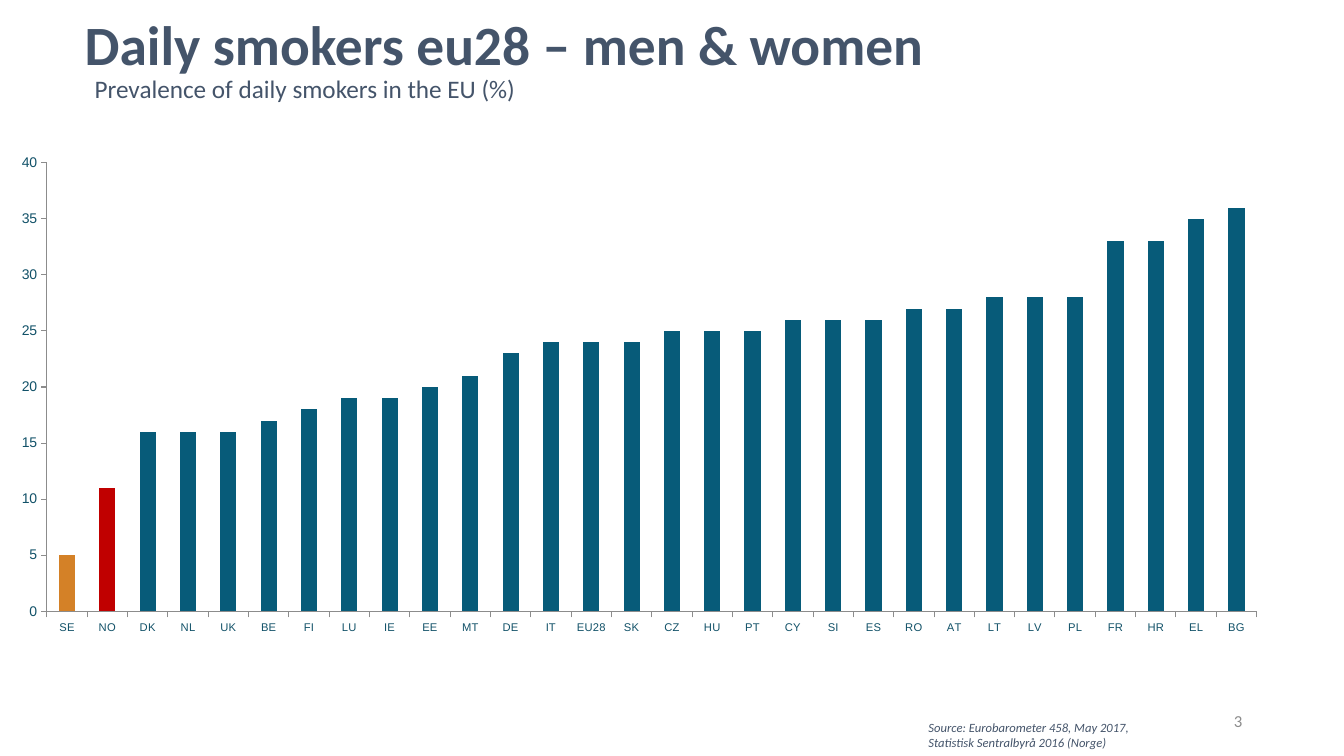
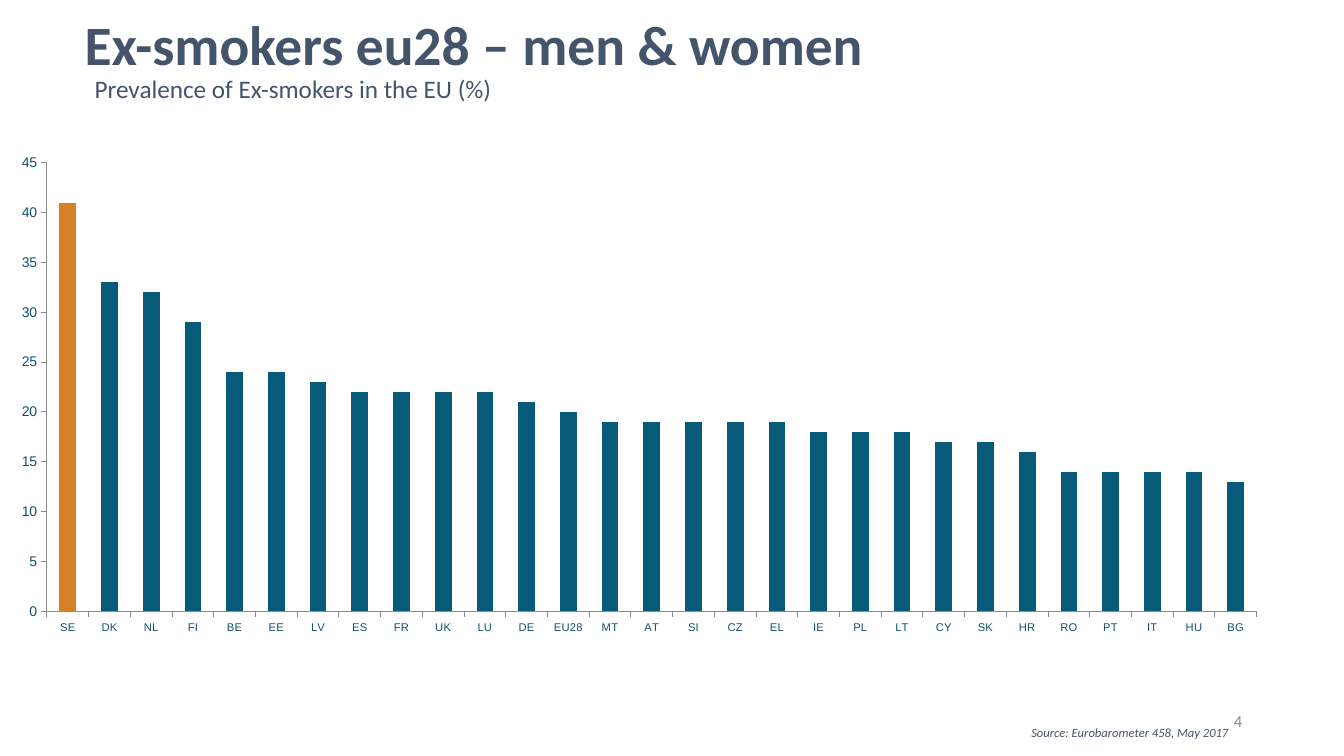
"""Build two slides that chart smoking prevalence in the EU."""
from dataclasses import dataclass

import lxml.etree
import pptx
import pptx.chart.data
import pptx.dml.color
import pptx.enum.chart
import pptx.enum.text
import pptx.oxml
import pptx.oxml.ns
import pptx.util

Inches = pptx.util.Inches
Align = pptx.enum.text.PP_ALIGN
Anchor = pptx.enum.text.MSO_ANCHOR


@dataclass(frozen=True)
class Theme:
    text: str = "44546A"
    muted: str = "8C8C8C"
    axis_text: str = "115168"
    bar: str = "075B79"
    sweden: str = "D48127"
    norway: str = "C00000"
    body_font: str = "Calibri"
    chart_font: str = "Arial"
    title_size: float = 39.6
    subtitle_size: int = 18
    number_size: int = 12
    source_size: int = 9
    value_size: int = 10
    category_size: int = 8


THEME = Theme()
HIGHLIGHTS = {"SE": THEME.sweden, "NO": THEME.norway}
PLOT_AREA = {"x": 0.037, "y": 0.027, "w": 0.953, "h": 0.832}

SLIDES = [
    {
        "number": "3",
        "title": "Daily smokers eu28 – men & women",
        "subtitle": "Prevalence of daily smokers in the EU (%)",
        "source": "Source: Eurobarometer 458, May 2017, Statistisk Sentralbyrå 2016 (Norge)",
        "source_position": (9.11, 7.09),
        "maximum": 40,
        "countries": "SE NO DK NL UK BE FI LU IE EE MT DE IT EU28 SK CZ HU PT CY SI "
                     "ES RO AT LT LV PL FR HR EL BG",
        "values": [5, 11, 16, 16, 16, 17, 18, 19, 19, 20, 21, 23, 24, 24, 24, 25, 25, 25,
                   26, 26, 26, 27, 27, 28, 28, 28, 33, 33, 35, 36],
    },
    {
        "number": "4",
        "title": "Ex-smokers eu28 – men & women",
        "subtitle": "Prevalence of Ex-smokers in the EU (%)",
        "source": "Source: Eurobarometer 458, May 2017",
        "source_position": (10.13, 7.14),
        "maximum": 45,
        "countries": "SE DK NL FI BE EE LV ES FR UK LU DE EU28 MT AT SI CZ EL IE PL "
                     "LT CY SK HR RO PT IT HU BG",
        "values": [41, 33, 32, 29, 24, 24, 23, 22, 22, 22, 22, 21, 20, 19, 19, 19, 19, 19,
                   18, 18, 18, 17, 17, 16, 14, 14, 14, 14, 13],
    },
]


def rgb(color):
    return pptx.dml.color.RGBColor.from_string(color)


def style_font(font, size, color, name=THEME.body_font, bold=False, italic=False):
    font.name, font.size = name, pptx.util.Pt(size)
    font.bold, font.italic = bold, italic
    font.color.rgb = rgb(color)


def write_text(shape, text, size, color, anchor=Anchor.TOP, align=Align.LEFT, **style):
    frame = shape.text_frame
    frame.word_wrap = True
    frame.auto_size = pptx.enum.text.MSO_AUTO_SIZE.NONE
    frame.vertical_anchor = anchor
    frame.text = text
    paragraph = frame.paragraphs[0]
    paragraph.alignment = align
    style_font(paragraph.font, size, color, **style)
    return paragraph


def add_text(slide, box, *content, **style):
    write_text(slide.shapes.add_textbox(*map(Inches, box)), *content, **style)


def set_title(slide, text):
    title = slide.shapes.title
    title.left, title.top, title.width, title.height = map(Inches, (0.74, 0.24, 12.59, 0.47))
    paragraph = write_text(title, text, THEME.title_size, THEME.text,
                           anchor=Anchor.MIDDLE, bold=True)
    paragraph.line_spacing = 0.9


def style_axis(axis, size):
    axis.has_major_gridlines = False
    axis.major_tick_mark = pptx.enum.chart.XL_TICK_MARK.OUTSIDE
    axis.minor_tick_mark = pptx.enum.chart.XL_TICK_MARK.NONE
    axis.format.line.color.rgb = rgb(THEME.muted)
    axis.format.line.width = pptx.util.Pt(0.75)
    style_font(axis.tick_labels.font, size, THEME.axis_text, name=THEME.chart_font)


def place_plot_area(chart):
    plot_area = chart.plots[0]._element.getparent()
    for layout in plot_area.findall(pptx.oxml.ns.qn("c:layout")):
        plot_area.remove(layout)
    layout = pptx.oxml.parse_xml(f"<c:layout {pptx.oxml.ns.nsdecls('c')}><c:manualLayout/></c:layout>")
    settings = [("layoutTarget", "inner"), ("xMode", "edge"), ("yMode", "edge"), *PLOT_AREA.items()]
    for tag, value in settings:
        lxml.etree.SubElement(layout[0], pptx.oxml.ns.qn(f"c:{tag}"), val=str(value))
    plot_area.insert(0, layout)


def add_prevalence_chart(slide, countries, values, maximum):
    data = pptx.chart.data.CategoryChartData()
    data.categories = countries
    data.add_series("Series 1", values)
    chart = slide.shapes.add_chart(pptx.enum.chart.XL_CHART_TYPE.COLUMN_CLUSTERED,
                                   *map(Inches, (0, 1.47, 12.59, 5.35)), data).chart
    chart.has_title = chart.has_legend = False
    style_axis(chart.category_axis, THEME.category_size)
    style_axis(chart.value_axis, THEME.value_size)
    chart.value_axis.minimum_scale, chart.value_axis.maximum_scale = 0, maximum
    chart.value_axis.major_unit = 5
    place_plot_area(chart)

    plot = chart.plots[0]
    plot.gap_width = 150
    plot.vary_by_categories = False
    series = plot.series[0]
    bars = [(series.format.fill, THEME.bar)]
    bars += [(series.points[index].format.fill, HIGHLIGHTS[country])
             for index, country in enumerate(countries) if country in HIGHLIGHTS]
    for fill, color in bars:
        fill.solid()
        fill.fore_color.rgb = rgb(color)


def build_slide(presentation, content):
    slide = presentation.slides.add_slide(presentation.slide_layouts.get_by_name("Title Only"))
    set_title(slide, content["title"])
    add_text(slide, (9.42, 6.95, 3, 0.4), content["number"], THEME.number_size, THEME.muted,
             anchor=Anchor.MIDDLE, align=Align.RIGHT)
    add_prevalence_chart(slide, content["countries"].split(), content["values"], content["maximum"])
    add_text(slide, (*content["source_position"], 2.59, 0.23), content["source"],
             THEME.source_size, THEME.text, italic=True)
    add_text(slide, (0.84, 0.68, 9.68, 0.71), content["subtitle"],
             THEME.subtitle_size, THEME.text)


def main():
    presentation = pptx.Presentation()
    presentation.slide_width, presentation.slide_height = Inches(13.33), Inches(7.5)
    for content in SLIDES:
        build_slide(presentation, content)
    presentation.save("out.pptx")


if __name__ == "__main__":
    main()
